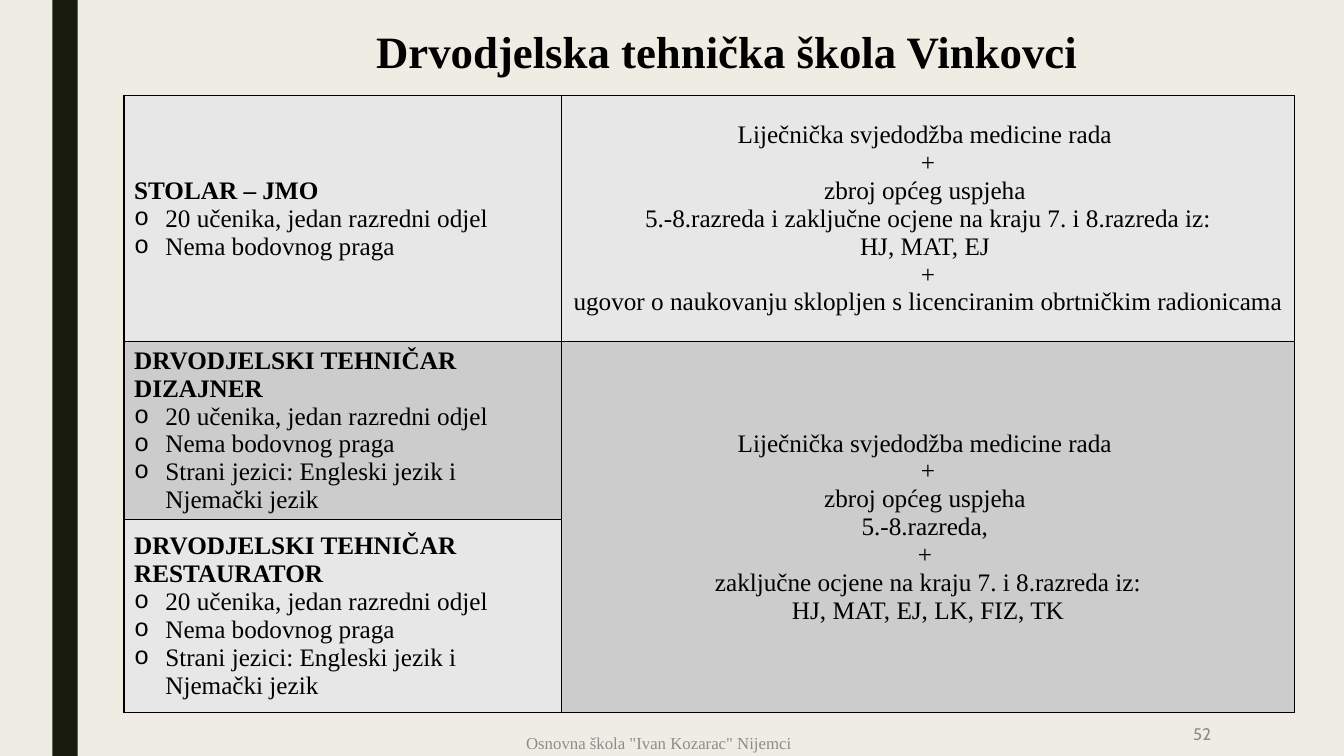
from pptx import Presentation
from pptx.dml.color import RGBColor
from pptx.enum.shapes import MSO_SHAPE
from pptx.enum.text import MSO_ANCHOR, MSO_AUTO_SIZE, PP_ALIGN
from pptx.oxml import parse_xml
from pptx.oxml.ns import nsdecls
from pptx.util import Inches, Pt

SERIF = "Times New Roman"
LIGHT, DARK = "E7E7E7", "CCCCCC"
PLACES = "20 učenika, jedan razredni odjel"
NO_MINIMUM = "Nema bodovnog praga"
LANGUAGES = "Strani jezici: Engleski jezik i Njemački jezik"
MEDICAL = "Liječnička svjedodžba medicine rada "

# Each programme: name, bullet points, row height, fill
PROGRAMMES = [
    ("STOLAR – JMO", [PLACES, NO_MINIMUM], 2.44, LIGHT),
    ("DRVODJELSKI TEHNIČAR DIZAJNER",
     [PLACES, NO_MINIMUM, LANGUAGES], 1.75, DARK),
    ("DRVODJELSKI TEHNIČAR RESTAURATOR",
     [PLACES, NO_MINIMUM, LANGUAGES], 1.92, LIGHT),
]
# Each requirement: first row, last row, paragraphs (\v breaks a line), fill
REQUIREMENTS = [
    (0, 0, [MEDICAL, "+",
            "zbroj općeg uspjeha \v5.-8.razreda i zaključne ocjene "
            "na kraju 7. i 8.razreda iz:\vHJ, MAT, EJ ",
            "+",
            "ugovor o naukovanju sklopljen s licenciranim "
            "obrtničkim radionicama"], LIGHT),
    (1, 2, [MEDICAL, "+", "zbroj općeg uspjeha \v5.-8.razreda, ", "+ ",
            "zaključne ocjene na kraju 7. i 8.razreda iz:"
            "\vHJ, MAT, EJ, LK, FIZ, TK"], DARK),
]


def rgb(code):
    return RGBColor.from_string(code)


def write(frame, text, size=18, font=SERIF, color="000000", bold=False,
          align=PP_ALIGN.LEFT, bullet=None, spacing=None):
    """Fill the frame's empty first paragraph, or add another one."""
    para = frame.paragraphs[-1]
    if para.text:
        para = frame.add_paragraph()
    para.text = text
    para.alignment = align
    if spacing:
        para.line_spacing = spacing
    for run in para.runs:
        run.font.size = Pt(size)
        run.font.name = font
        run.font.bold = bold
        run.font.color.rgb = rgb(color)
    if bullet:
        props = para._p.get_or_add_pPr()
        props.set("marL", str(Inches(0.31)))
        props.set("indent", str(-Inches(0.31)))
        props.append(parse_xml(
            f'<a:buFont {nsdecls("a")} typeface="Courier New"/>'))
        props.append(parse_xml(f'<a:buChar {nsdecls("a")} char="{bullet}"/>'))


def add_bar(slide, left, top, width, height):
    bar = slide.shapes.add_shape(MSO_SHAPE.RECTANGLE, Inches(left),
                                 Inches(top), Inches(width), Inches(height))
    bar.shadow.inherit = False
    bar.fill.solid()
    bar.fill.fore_color.rgb = rgb("191B0E")
    bar.line.fill.background()


def set_title(slide, text, left, top, width, height):
    title = slide.shapes.title
    title.left, title.top = Inches(left), Inches(top)
    title.width, title.height = Inches(width), Inches(height)
    frame = title.text_frame
    frame.auto_size = MSO_AUTO_SIZE.NONE
    frame.vertical_anchor = MSO_ANCHOR.TOP
    write(frame, text, size=32, bold=True, spacing=0.89)


def style_cell(cell, fill):
    props = cell._tc.get_or_add_tcPr()
    for side in "LRTB":
        props.append(parse_xml(
            f'<a:ln{side} {nsdecls("a")} w="{Pt(1)}"><a:solidFill>'
            f'<a:srgbClr val="000000"/></a:solidFill></a:ln{side}>'))
    cell.fill.solid()
    cell.fill.fore_color.rgb = rgb(fill)
    cell.vertical_anchor = MSO_ANCHOR.MIDDLE


def add_programmes(slide, left, top, widths):
    heights = [height for _, _, height, _ in PROGRAMMES]
    table = slide.shapes.add_table(
        len(heights), len(widths), Inches(left), Inches(top),
        Inches(sum(widths)), Inches(sum(heights))).table
    table.first_row = table.horz_banding = False
    for column, width in zip(table.columns, widths):
        column.width = Inches(width)

    for row, (name, points, height, fill) in enumerate(PROGRAMMES):
        table.rows[row].height = Inches(height)
        cell = table.cell(row, 0)
        style_cell(cell, fill)
        write(cell.text_frame, name, bold=True)
        for point in points:
            write(cell.text_frame, point, bullet="o")

    for first, last, lines, fill in REQUIREMENTS:
        for row in range(first, last + 1):
            style_cell(table.cell(row, 1), fill)
        cell = table.cell(first, 1)
        if last > first:
            cell.merge(table.cell(last, 1))
        for line in lines:
            write(cell.text_frame, line, align=PP_ALIGN.CENTER)


def add_note(slide, text, left, top, width, height, **style):
    box = slide.shapes.add_textbox(Inches(left), Inches(top),
                                   Inches(width), Inches(height))
    frame = box.text_frame
    frame.word_wrap = True
    frame.vertical_anchor = MSO_ANCHOR.MIDDLE
    write(frame, text, size=12, color="8C8C8C", **style)


def main():
    deck = Presentation()
    deck.slide_width, deck.slide_height = Inches(13.33), Inches(7.5)
    slide = deck.slides.add_slide(deck.slide_layouts[5])
    slide.background.fill.solid()
    slide.background.fill.fore_color.rgb = rgb("EFEDE3")
    add_bar(slide, 0.52, 0, 0.25, 7.5)
    set_title(slide, "Drvodjelska tehnička škola Vinkovci",
              3.63, 0.25, 10.5, 0.8)
    add_programmes(slide, 1.23, 0.95, [4.34, 7.27])
    add_note(slide, 'Osnovna škola "Ivan Kozarac" Nijemci',
             5.12, 7.15, 6.87, 0.44)
    add_note(slide, "52", 10.36, 7.06, 1.75, 0.44,
             font="Cabin", align=PP_ALIGN.RIGHT)
    deck.save("out.pptx")


if __name__ == "__main__":
    main()
